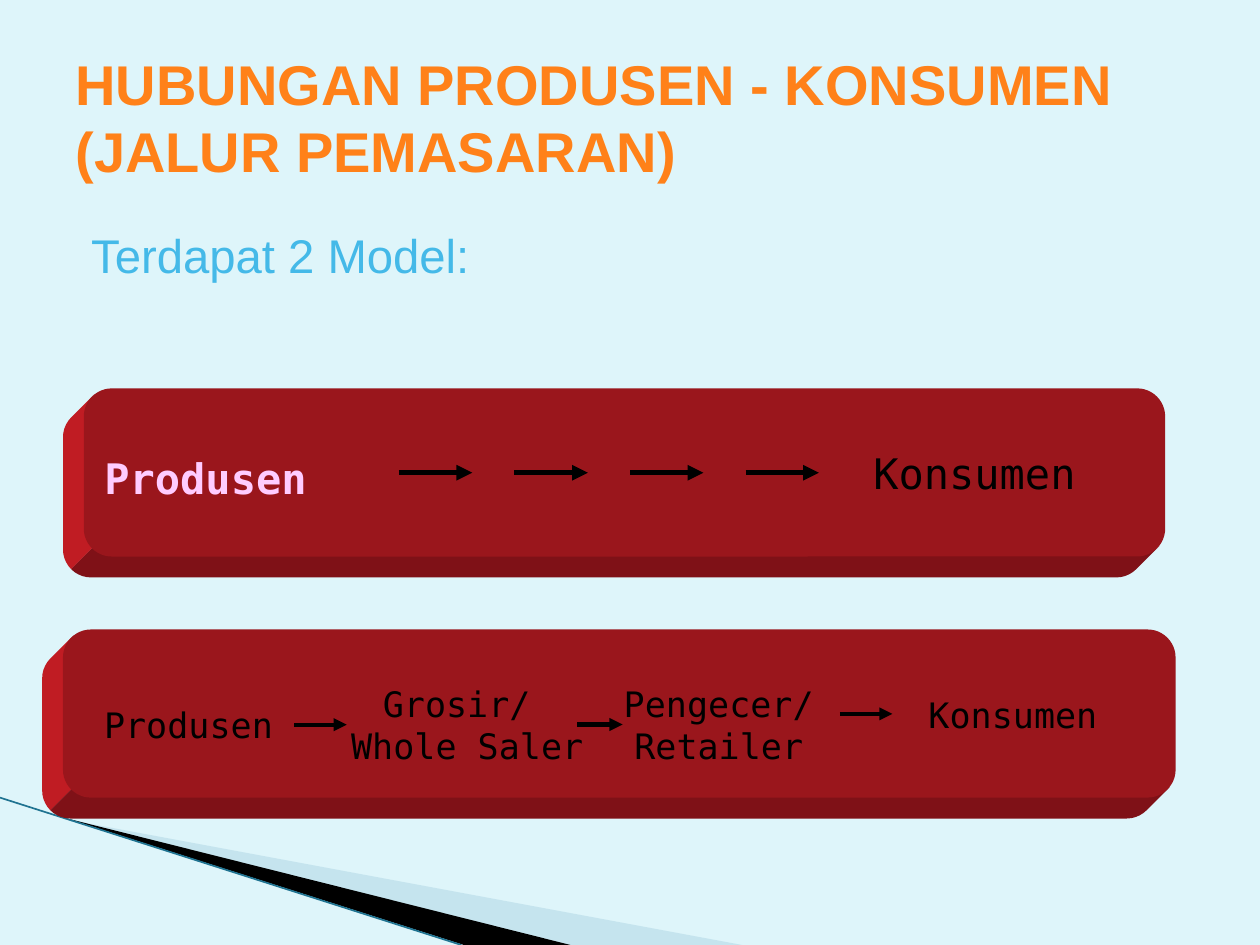
from dataclasses import dataclass
from math import cos, sin, radians

from lxml import etree
from pptx import Presentation
from pptx.dml.color import RGBColor
from pptx.enum.shapes import MSO_CONNECTOR, MSO_SHAPE
from pptx.enum.text import MSO_ANCHOR, PP_ALIGN
from pptx.oxml.ns import qn
from pptx.util import Cm, Pt

LINE = MSO_CONNECTOR.STRAIGHT
ROUND = MSO_SHAPE.ROUNDED_RECTANGLE
TOP, MIDDLE = MSO_ANCHOR.TOP, MSO_ANCHOR.MIDDLE
LEFT, CENTER = PP_ALIGN.LEFT, PP_ALIGN.CENTER


@dataclass(frozen=True)
class Theme:
    back: str = "DEF5FA"
    title: str = "FF8119"
    lead: str = "44B9E8"
    pink: str = "FFCCFF"
    ink: str = "000000"
    face: str = "9A161C"
    side: str = "C01C23"
    base: str = "7F1117"
    pale: str = "A0CBDC"
    edge: str = "1F7391"
    sans: str = "Arial"
    mono: str = "DejaVu Sans Mono"
    head: int = 32
    body: int = 27
    large: int = 24
    small: int = 20


theme = Theme()
deck = Presentation()
deck.slide_width, deck.slide_height = Cm(25.4), Cm(19.05)
slide = deck.slides.add_slide(deck.slide_layouts[6])
shapes = slide.shapes
slide.background.fill.solid()
slide.background.fill.fore_color.rgb = RGBColor.from_string(theme.back)


def write(text, at=None, box=None, size=theme.small, color=theme.ink,
          font=theme.mono, bold=False, align=CENTER, anchor=MIDDLE, inset=0):
    """Write text in the given box, or in a new text box."""
    box = box or shapes.add_textbox(*map(Cm, at))
    frame = box.text_frame
    frame.word_wrap = True
    frame.margin_left = frame.margin_right = Cm(inset)
    frame.vertical_anchor = anchor
    frame.text = text
    for para in frame.paragraphs:
        para.alignment = align
        para.font.name, para.font.size, para.font.bold = font, Pt(size), bold
        para.font.color.rgb = RGBColor.from_string(color)
    return box


def shade(shape, color):
    """Give a shape a flat fill with no line or shadow."""
    shape.shadow.inherit = False
    shape.fill.solid()
    shape.fill.fore_color.rgb = RGBColor.from_string(color)
    shape.line.fill.background()


# Wedges at the foot
wedges = [
    ([(1.4, 16.53), (14.96, 19.05), (11.5, 19.05)], theme.pale, 40),
    ([(1.35, 16.5), (11.5, 19.05), (9.35, 19.05)], theme.ink, 100),
]
for points, color, alpha in wedges:
    start, *rest = [(Cm(x), Cm(y)) for x, y in points]
    path = shapes.build_freeform(*start)
    path.add_line_segments(rest)
    wedge = path.convert_to_shape()
    shade(wedge, color)
    if alpha < 100:
        tint = wedge.fill._xPr.find(".//" + qn("a:srgbClr"))
        etree.SubElement(tint, qn("a:alpha"), val=str(alpha * 1000))

edge = shapes.add_connector(LINE, Cm(0), Cm(16.08), Cm(9.3), Cm(19.05))
edge.line.color.rgb = RGBColor.from_string(theme.edge)
edge.line.width = Pt(0.95)
etree.SubElement(edge._element.spPr, qn("a:effectLst"))

# Heading and lead
write("HUBUNGAN PRODUSEN - KONSUMEN\v(JALUR PEMASARAN)", (1.27, 0.76, 22.86, 3.18),
      size=theme.head, color=theme.title, font=theme.sans, bold=True,
      align=LEFT, inset=0.25)
write("Terdapat 2 Model:", (1.59, 4.43, 22.5, 3.2), size=theme.body,
      color=theme.lead, font=theme.sans, align=LEFT, anchor=TOP, inset=0.25)

# Blocks with depth towards the lower left; bands reach under the face
depth, tall, lap = 0.42, 3.39, 0.05
curve = tall / 6
blocks = []
for x, y, wide in [(1.69, 7.83, 21.8), (1.27, 12.69, 22.43)]:
    near, far = x + curve, x + wide - curve
    high, low = y + curve, y + tall - curve
    # Each band follows two corners: centre x, centre y, first and last angle
    bands = [
        (theme.side, [(near, high, 225, 180), (near, low, 180, 135)]),
        (theme.base, [(near, low, 135, 90), (far, low, 90, 45)]),
    ]
    for color, turns in bands:
        rim = [(cx + curve * cos(radians(a)), cy + curve * sin(radians(a)))
               for cx, cy, first, last in turns
               for a in range(first, last - 1, -9)]
        outer = [(px - depth, py + depth) for px, py in rim]
        inner = [(px + lap, py - lap) for px, py in reversed(rim)]
        start, *rest = [(Cm(px), Cm(py)) for px, py in outer + inner]
        path = shapes.build_freeform(*start)
        path.add_line_segments(rest)
        shade(path.convert_to_shape(), color)
    block = shapes.add_shape(ROUND, Cm(x), Cm(y), Cm(wide), Cm(tall))
    shade(block, theme.face)
    blocks.append(block)

# Labels of the direct model
write("Produsen", box=blocks[0], size=theme.large, color=theme.pink,
      bold=True, align=LEFT, inset=0.25)
blocks[0].text_frame.margin_top = Cm(0.32)
write("Konsumen ", (17.57, 8.89, 4.66, 1.27), size=theme.large)

# Labels of the model with middlemen
write("Produsen", (2.05, 13.76, 3.5, 1.69))
write("Grosir/ \nWhole Saler", (7.04, 13.76, 4.76, 1.69))
retail = write("Pengecer/\nRetailer", (12.55, 13.76, 3.88, 1.69))
write("Konsumen", (18.67, 13.76, 3.5, 1.27))

# Arrows: left, top, length, weight, box they join
arrows = [(8.04 + 2.33 * i, 9.53, 1.48, 3, None) for i in range(4)]
arrows += [(5.93, 14.61, 1.06, 2.5, None),
           (11.64, 14.605, 1.06, 2.5, retail),
           (16.93, 14.39, 1.06, 2.5, None)]
for x, y, span, weight, goal in arrows:
    arrow = shapes.add_connector(LINE, Cm(x), Cm(y), Cm(x + span), Cm(y))
    if goal:
        arrow.end_connect(goal, 1)
    arrow.line.color.rgb = RGBColor.from_string(theme.ink)
    arrow.line.width = Pt(weight)
    etree.SubElement(arrow.line._ln, qn("a:tailEnd"), type="triangle")
    etree.SubElement(arrow._element.spPr, qn("a:effectLst"))

deck.save("out.pptx")
